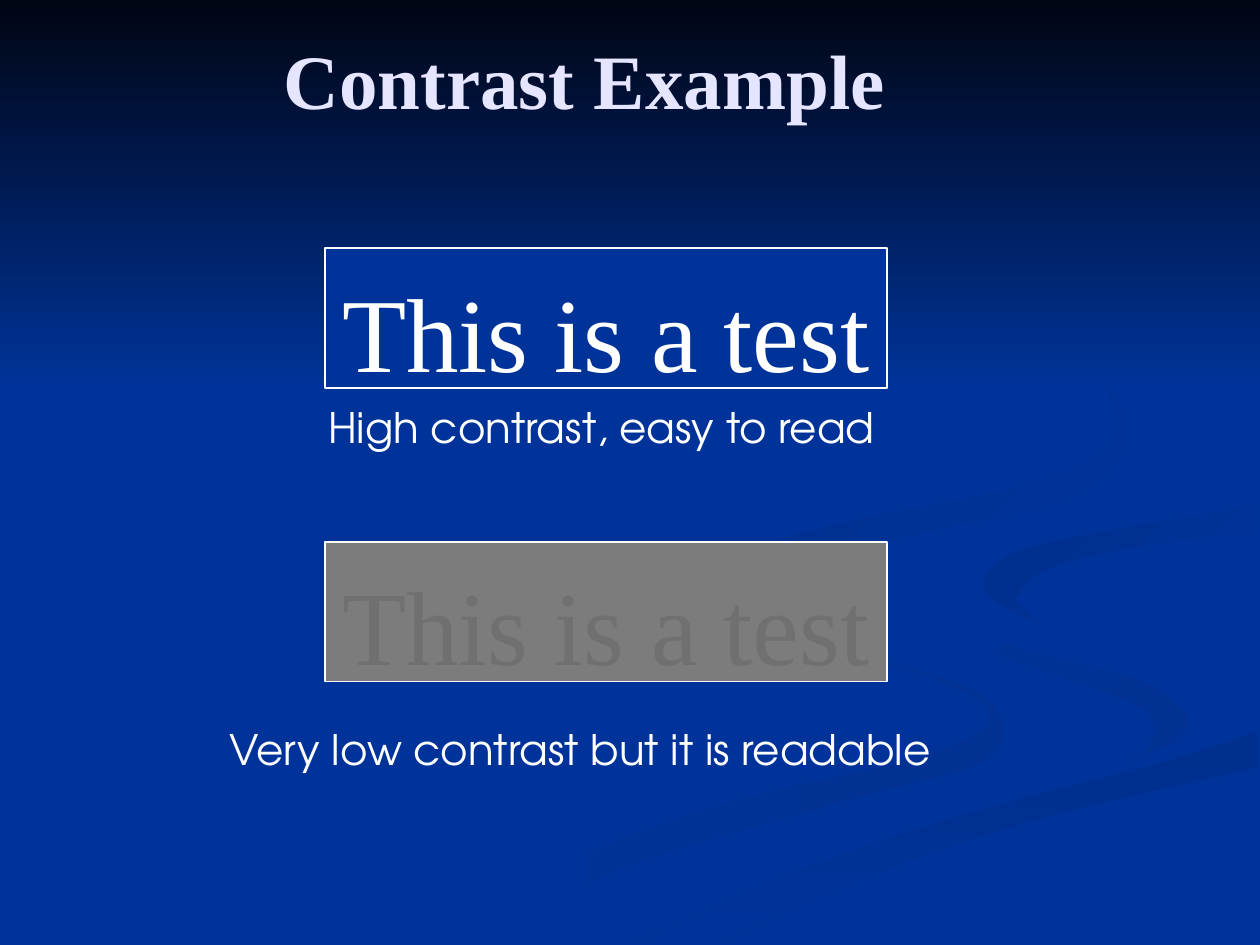
from dataclasses import dataclass
from pptx import Presentation
from pptx.dml.color import RGBColor as RGB
from pptx.enum.text import MSO_ANCHOR as Anchor, PP_ALIGN as Align
from pptx.enum.shapes import MSO_SHAPE as Kind
from pptx.util import Inches, Pt

BLUE = RGB(0x00, 0x33, 0x99)
SHADE = RGB(0x00, 0x31, 0x93)
DEEP = RGB(0x00, 0x2F, 0x8D)
NIGHT = RGB(0x00, 0x05, 0x14)
WHITE = RGB(0xFF, 0xFF, 0xFF)
LILAC = RGB(0xE5, 0xE5, 0xFF)
GREY = RGB(0x7C, 0x7C, 0x7C)
DIM = RGB(0x70, 0x70, 0x70)
SERIF = "Times New Roman"
SANS = "TeX Gyre Adventor"
STEPS = 5

Point = tuple[float, float]


@dataclass
class Ribbon:
    """Two curved edges, there and back; the angle runs clockwise."""
    first: RGB
    last: RGB
    angle: int
    there: list[Point]
    back: list[Point]


@dataclass
class Sample:
    top: float
    fill: RGB
    ink: RGB


@dataclass
class Label:
    text: str
    box: tuple[float, float, float, float]
    size: int
    font: str
    ink: RGB
    bold: bool = False
    wrap: bool = False


RIBBONS = [
    Ribbon(BLUE, SHADE, 0,
           [(5.75, 4.59), (5.81, 4.84), (6.54, 5.13), (7.41, 5.39),
            (7.86, 5.66), (7.39, 5.98), (5.39, 6.49), (3, 7.49)],
           [(3.61, 7.49), (4.99, 6.87), (6.76, 6.34), (7.86, 6.01),
            (7.81, 5.53), (6.82, 5.19), (5.94, 4.85)]),
    Ribbon(BLUE, SHADE, 45,
           [(7.24, 4.64), (7.46, 5), (8.38, 5.36), (9.07, 5.62),
            (9.14, 5.89), (8.94, 6.05)],
           [(9.32, 5.89), (9.43, 5.7), (9.05, 5.4), (8.11, 5.15), (7.45, 4.9)]),
    Ribbon(DEEP, BLUE, 90,
           [(5.03, 7.49), (6.3, 6.93), (7.64, 6.47), (9.2, 6.06), (9.98, 5.81)],
           [(9.98, 6.09), (8.21, 6.51), (6.7, 7.02), (5.71, 7.49)]),
    Ribbon(DEEP, BLUE, 45,
           [(9.98, 4.02), (8.65, 4.24), (7.99, 4.42), (7.82, 4.69), (8.26, 4.96)],
           [(8.05, 4.76), (8.28, 4.53), (8.96, 4.35), (9.98, 4.2)]),
    Ribbon(DEEP, BLUE, 45,
           [(7.62, 2.33), (8.46, 2.79), (8.89, 3.35), (8.42, 3.78),
            (6.76, 4.14), (5.97, 4.37), (5.8, 4.74), (6.22, 5)],
           [(5.93, 4.7), (6.24, 4.44), (7.39, 4.21), (8.55, 3.91),
            (8.94, 3.44), (8.64, 2.91), (7.99, 2.5)]),
]

SAMPLES = [Sample(1.97, BLUE, WHITE), Sample(4.3, GREY, DIM)]

LABELS = [
    Label("Contrast Example", (0.39, 0, 8.5, 1.25), 44, SERIF, LILAC, True, True),
    Label("High contrast, easy to read ", (2.49, 3.14, 4.66, 0.5), 24, SANS, WHITE),
    Label("Very low contrast but it is readable", (1.69, 5.69, 5.83, 0.5),
          24, SANS, WHITE),
]


def smooth(knots: list[Point]) -> list[Point]:
    """Run a Catmull-Rom curve through the knots."""
    ends = [knots[0], *knots, knots[-1]]
    curve = []
    for a, b, c, d in zip(ends, ends[1:], ends[2:], ends[3:]):
        for step in range(STEPS):
            t = step / STEPS
            curve.append(tuple(
                q + t / 2 * (r - p + t * (2 * p - 5 * q + 4 * r - s
                                          + t * (3 * (q - r) + s - p)))
                for p, q, r, s in zip(a, b, c, d)))
    return curve + [knots[-1]]


def shade(shape, first: RGB, last: RGB, angle: int) -> None:
    shape.shadow.inherit = False
    shape.line.fill.background()
    shape.fill.gradient()
    shape.fill.gradient_angle = -angle % 360
    for stop, tint in zip(shape.fill.gradient_stops, (first, last)):
        stop.color.rgb = tint


def draw_ribbon(slide, item: Ribbon) -> None:
    edge = smooth(item.there) + smooth(item.back)
    start, *rest = [(Inches(x), Inches(y)) for x, y in edge]
    pen = slide.shapes.build_freeform(*start)
    pen.add_line_segments(rest, close=True)
    shade(pen.convert_to_shape(), item.first, item.last, item.angle)


def draw_sky(slide) -> None:
    sky = slide.shapes.add_shape(Kind.RECTANGLE, 0, 0, Inches(10), Inches(3.08))
    shade(sky, NIGHT, BLUE, 90)


def write(frame, text: str, size: int, font: str, ink: RGB, bold: bool = False) -> None:
    line = frame.paragraphs[0]
    line.text = text
    line.alignment = Align.CENTER
    line.font.size = Pt(size)
    line.font.name = font
    line.font.color.rgb = ink
    line.font.bold = bold


def draw_sample(slide, item: Sample) -> None:
    box = slide.shapes.add_shape(
        Kind.RECTANGLE, Inches(2.58), Inches(item.top), Inches(4.46), Inches(1.11))
    box.shadow.inherit = False
    box.fill.solid()
    box.fill.fore_color.rgb = item.fill
    box.line.color.rgb = WHITE
    box.line.width = Pt(1)
    frame = box.text_frame
    frame.word_wrap = False
    frame.vertical_anchor = Anchor.TOP
    frame.margin_top, frame.margin_bottom = Inches(0.15), 0
    write(frame, "This is a test", 60, SERIF, item.ink)


def draw_label(slide, item: Label) -> None:
    frame = slide.shapes.add_textbox(*map(Inches, item.box)).text_frame
    frame.word_wrap = item.wrap
    frame.vertical_anchor = Anchor.MIDDLE
    write(frame, item.text, item.size, item.font, item.ink, item.bold)


def main() -> None:
    deck = Presentation()
    deck.slide_width, deck.slide_height = Inches(10), Inches(7.5)
    slide = deck.slides.add_slide(deck.slide_layouts[6])
    slide.background.fill.solid()
    slide.background.fill.fore_color.rgb = BLUE
    for ribbon in RIBBONS:
        draw_ribbon(slide, ribbon)
    draw_sky(slide)
    for sample in SAMPLES:
        draw_sample(slide, sample)
    for label in LABELS:
        draw_label(slide, label)
    deck.save("out.pptx")


if __name__ == "__main__":
    main()
